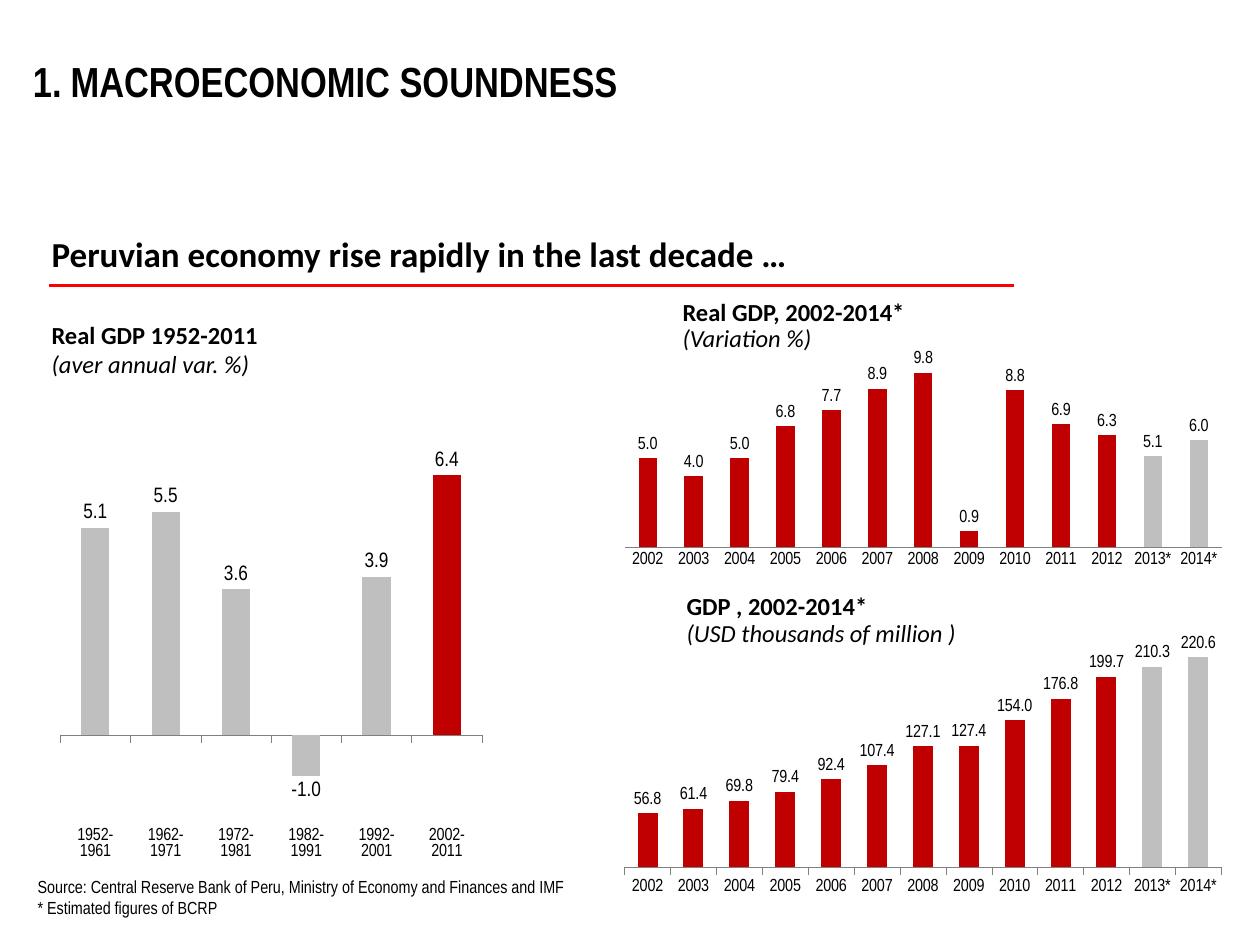
"""Build the macroeconomic soundness slide with three GDP column charts."""
from dataclasses import dataclass, field

from lxml.etree import SubElement
from pptx import Presentation
from pptx.chart.data import CategoryChartData
from pptx.dml.color import RGBColor
from pptx.enum.chart import (
    XL_CHART_TYPE as ChartType,
    XL_LABEL_POSITION as LabelPosition,
    XL_TICK_LABEL_POSITION as TickLabelPosition,
    XL_TICK_MARK as TickMark,
)
from pptx.enum.shapes import MSO_CONNECTOR as Connector
from pptx.enum.text import MSO_ANCHOR as Anchor, PP_ALIGN as Align
from pptx.oxml.ns import qn
from pptx.util import Cm, Pt

COLORS = {"text": "000000", "rule": "FF0000", "axis": "808080", "red": "C00000", "gray": "BFBFBF"}
NARROW = "Arial Narrow"
BODY = "Calibri"
DECADES = ["1952-1961", "1962-1971", "1972-1981", "1982-1991", "1992-2001", "2002-2011"]
YEARS = [str(year) for year in range(2002, 2013)] + ["2013*", "2014*"]


@dataclass
class Box:
    left: float
    top: float
    width: float
    height: float

    def lengths(self) -> tuple:
        return Cm(self.left), Cm(self.top), Cm(self.width), Cm(self.height)


@dataclass
class Line:
    text: str
    size: int
    font: str = BODY
    bold: bool = False
    italic: bool = False


@dataclass
class Note:
    box: Box
    lines: list[Line]
    spacing: float = 1.0
    anchor: Anchor = Anchor.TOP


@dataclass
class ColumnChart:
    box: Box
    plot: tuple[float, float, float, float]
    categories: list[str]
    values: list[float]
    minimum: float
    maximum: float
    color: str
    accent: str
    accented: list[int]
    gap: int = 150
    label_size: int = 10
    tick_mark: TickMark = TickMark.OUTSIDE
    tick_labels: TickLabelPosition = field(default=TickLabelPosition.NEXT_TO_AXIS)


def caption(title: str, unit: str) -> list[Line]:
    return [Line(title, 14, bold=True), Line(unit, 14, italic=True)]


NOTES = [
    Note(Box(0.79, 4.47, 23.32, 1.19),
         [Line("Peruvian economy rise rapidly in the last decade …", 20, bold=True)], 1.1, Anchor.MIDDLE),
    Note(Box(0.79, 6.32, 12.7, 1.45), caption("Real GDP 1952-2011", "(aver annual var. %)")),
    Note(Box(13.51, 5.92, 10.52, 1.35), caption("Real GDP, 2002-2014*", "(Variation %)"), 0.9),
    Note(Box(13.59, 11.86, 10.52, 1.32), caption("GDP , 2002-2014*", "(USD thousands of million )"), 0.9),
    Note(Box(0.51, 17.53, 12.7, 1.12), [
        Line("Source: Central Reserve Bank of Peru, Ministry of Economy and Finances and IMF", 10, NARROW),
        Line("* Estimated figures of BCRP", 10, NARROW),
    ]),
]

CHARTS = [
    ColumnChart(Box(0.89, 8.74, 8.99, 8.61), (0.036, 0.04, 0.946, 0.861), DECADES,
                [5.1, 5.5, 3.6, -1.0, 3.9, 6.4], -2, 7, "gray", "red", [5],
                label_size=12, tick_labels=TickLabelPosition.LOW),
    ColumnChart(Box(12.42, 7.06, 12.47, 4.88), (0.014, 0.078, 0.965, 0.737), YEARS,
                [5.0, 4.0, 5.0, 6.8, 7.7, 8.9, 9.8, 0.9, 8.8, 6.9, 6.3, 5.1, 6.0],
                0, 10, "red", "gray", [11, 12], tick_mark=TickMark.NONE),
    ColumnChart(Box(12.37, 12.52, 12.4, 5.64), (0.018, 0.028, 0.97, 0.853), YEARS,
                [56.8, 61.4, 69.8, 79.4, 92.4, 107.4, 127.1, 127.4, 154.0, 176.8, 199.7, 210.3, 220.6],
                0, 250, "red", "gray", [11, 12], gap=130),
]


def color(name: str) -> RGBColor:
    return RGBColor.from_string(COLORS[name])


def style_font(font, size: int, name: str, bold: bool = False, italic: bool = False) -> None:
    font.size, font.name, font.bold, font.italic = Pt(size), name, bold, italic
    font.color.rgb = color("text")


def add_title(slide, text: str, box: Box) -> None:
    title = slide.shapes.title
    title.left, title.top, title.width, title.height = box.lengths()
    title.text_frame.text = text
    title.text_frame.vertical_anchor = Anchor.MIDDLE
    paragraph = title.text_frame.paragraphs[0]
    paragraph.alignment = Align.LEFT
    properties = paragraph._p.get_or_add_pPr()
    properties.set("marL", str(Cm(0.76)))
    properties.set("indent", str(Cm(-0.76)))
    SubElement(properties, qn("a:buFont"), typeface=NARROW)
    SubElement(properties, qn("a:buAutoNum"), type="arabicPeriod")
    style_font(paragraph.font, 24, NARROW, bold=True)


def add_note(slide, note: Note) -> None:
    frame = slide.shapes.add_textbox(*note.box.lengths()).text_frame
    frame.word_wrap = True
    frame.vertical_anchor = note.anchor
    frame.text = "\n".join(line.text for line in note.lines)
    for paragraph, line in zip(frame.paragraphs, note.lines):
        paragraph.line_spacing = note.spacing
        style_font(paragraph.font, line.size, line.font, line.bold, line.italic)


def add_rule(slide) -> None:
    rule = slide.shapes.add_connector(Connector.STRAIGHT, Cm(0.99), Cm(5.75), Cm(20.45), Cm(5.75))
    rule.line.color.rgb = color("rule")
    rule.line.width = Pt(1.5)
    SubElement(rule.element.spPr, qn("a:effectLst"))


def set_plot_area(chart, plot: tuple[float, float, float, float]) -> None:
    area = chart.element.xpath(".//c:plotArea")[0]
    for layout in area.findall(qn("c:layout")):
        area.remove(layout)
    layout = SubElement(area, qn("c:layout"))
    area.insert(0, layout)
    manual = SubElement(layout, qn("c:manualLayout"))
    settings = [("layoutTarget", "inner"), ("xMode", "edge"), ("yMode", "edge"), *zip("xywh", plot)]
    for tag, value in settings:
        SubElement(manual, qn(f"c:{tag}"), val=str(value))


def add_column_chart(slide, spec: ColumnChart) -> None:
    data = CategoryChartData(number_format="0.0")
    data.categories = spec.categories
    data.add_series("Series 1", spec.values)
    chart = slide.shapes.add_chart(ChartType.COLUMN_CLUSTERED, *spec.box.lengths(), data).chart
    chart.has_title = chart.has_legend = False
    style_font(chart.font, spec.label_size, NARROW)
    set_plot_area(chart, spec.plot)

    value_axis = chart.value_axis
    value_axis.visible = value_axis.has_major_gridlines = False
    value_axis.minimum_scale, value_axis.maximum_scale = spec.minimum, spec.maximum
    category_axis = chart.category_axis
    category_axis.major_tick_mark = spec.tick_mark
    category_axis.tick_label_position = spec.tick_labels
    category_axis.format.line.color.rgb = color("axis")
    category_axis.format.line.width = Pt(0.25)
    style_font(category_axis.tick_labels.font, 10, NARROW)

    plot = chart.plots[0]
    plot.gap_width = spec.gap
    plot.vary_by_categories = False
    series = plot.series[0]
    series.invert_if_negative = False
    series.format.fill.solid()
    series.format.fill.fore_color.rgb = color(spec.color)
    for index in spec.accented:
        fill = series.points[index].format.fill
        fill.solid()
        fill.fore_color.rgb = color(spec.accent)
    labels = series.data_labels
    labels.show_value = True
    labels.position = LabelPosition.OUTSIDE_END
    labels.number_format, labels.number_format_is_linked = "#,##0.0", False
    style_font(labels.font, spec.label_size, NARROW)


def main() -> None:
    presentation = Presentation()
    presentation.slide_width, presentation.slide_height = Cm(25.4), Cm(19.05)
    slide = presentation.slides.add_slide(presentation.slide_layouts[5])
    add_title(slide, "MACROECONOMIC SOUNDNESS", Box(0.41, 0.64, 13.23, 1.96))
    add_rule(slide)
    for note in NOTES:
        add_note(slide, note)
    for chart in CHARTS:
        add_column_chart(slide, chart)
    presentation.save("out.pptx")


if __name__ == "__main__":
    main()
